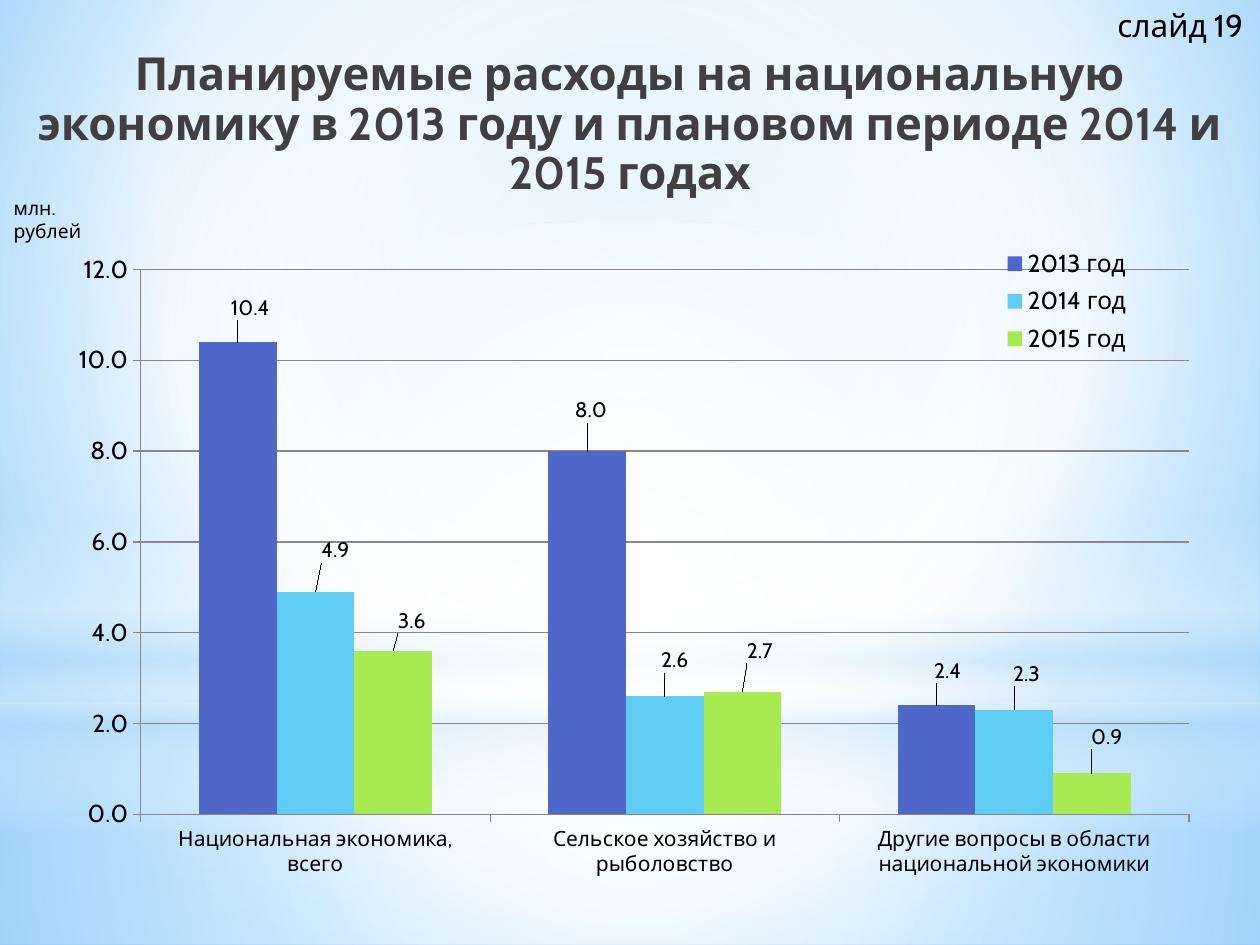
from lxml import etree
from pptx import Presentation
from pptx import util as u
from pptx.chart.data import CategoryChartData
from pptx.dml.color import RGBColor
from pptx.enum import chart as ch, shapes, text
from pptx.oxml.ns import qn

FONT = "Cabin"
WIDTH, HEIGHT = 10, 7.5

# Content
TITLE = ("Планируемые расходы на национальную экономику в 2013 году "
         "и плановом периоде 2014 и 2015 годах")
UNIT = "млн. рублей"
PAGE_LABEL = "слайд 19"
CATEGORIES = ["Национальная экономика, всего", "Сельское хозяйство и рыболовство",
              "Другие вопросы в области национальной экономики"]
# name, colour, values, label shifts in percent of the chart
SERIES = [
    ("2013 год", "4E67C8", (10.4, 8.0, 2.4), ((1, -2.4), (0.3, -3.3), (0.9, -2.4))),
    ("2014 год", "5ECCF3", (4.9, 2.6, 2.3), ((1.6, -3.4), (0.8, -2.6), (1, -2.6))),
    ("2015 год", "A7EA52", (3.6, 2.7, 0.9), ((1.5, -1.8), (1.4, -3.3), (1.2, -2.7))),
]

# Gradients: stops are (position, colour, opacity) in percent
CENTRE = (50, 50, 50, 50)
BACKGROUND = [(0, "9ED5FF", 100), (60, "FFFFFF", 100), (100, "5BB9FF", 100)]
TITLE_FILL = [(0, "000000", 100), (40, "404040", 100), (100, "212745", 65)]
RECT, OVAL = shapes.MSO_SHAPE.RECTANGLE, shapes.MSO_SHAPE.OVAL
# shape, top, height, stops, centre rectangle (None for a vertical run)
GLOWS = [
    (RECT, 5.58, 1.92, [(0, "FFFFFF", 91), (37, "FFFFFF", 76), (100, "B4DCFA", 79)], CENTRE),
    (RECT, 0, 5.58, [(0, "FFFFFF", 89), (48, "FFFFFF", 62), (100, "B4DCFA", 79)], CENTRE),
    (RECT, 4.12, 2.5, [(0, "FFFFFF", 0), (29, "FFFFFF", 30), (45, "B4DCFA", 40),
                       (55, "FFFFFF", 26), (65, "B4DCFA", 60), (100, "FFFFFF", 0)], None),
    (OVAL, 1.75, 5.58, [(0, "FFFFFF", 100), (56, "FFFFFF", 0)], CENTRE),
]


def child(parent, tag, **attributes):
    node = etree.SubElement(parent, qn(tag))
    for name, value in attributes.items():
        node.set(name, str(value))
    return node


def colour(value):
    return RGBColor.from_string(value)


def paint_gradient(fill, owner, stops, centre=None):
    fill.gradient()
    grad = owner.find(".//" + qn("a:gradFill"))
    for old in list(grad):
        grad.remove(old)
    stop_list = child(grad, "a:gsLst")
    for position, value, opacity in stops:
        stop = child(stop_list, "a:gs", pos=position * 1000)
        shade = child(stop, "a:srgbClr", val=value)
        if opacity < 100:
            child(shade, "a:alpha", val=opacity * 1000)
    if centre:
        sides = {side: share * 1000 for side, share in zip("ltrb", centre)}
        child(child(grad, "a:path", path="circle"), "a:fillToRect", **sides)
    else:
        child(grad, "a:lin", ang=90 * 60000, scaled=0)


def format_font(font, size, value="000000", bold=False):
    font.name, font.size, font.bold = FONT, u.Pt(size), bold
    font.color.rgb = colour(value)


def write(frame, words, size, align=text.PP_ALIGN.LEFT, wrap=False, bold=False):
    frame.word_wrap = wrap
    frame.vertical_anchor = text.MSO_ANCHOR.TOP
    para = frame.paragraphs[0]
    para.alignment = align
    span = para.add_run()
    span.text = words
    format_font(span.font, size, bold=bold)
    return span


def place_layout(parent, after, **parts):
    for old in parent.findall(qn("c:layout")):
        parent.remove(old)
    layout = etree.Element(qn("c:layout"))
    manual = child(layout, "c:manualLayout")
    for name, value in parts.items():
        child(manual, "c:" + name, val=value)
    parent.insert(0 if after is None else parent.index(after) + 1, layout)


def style_axis(axis, size):
    format_font(axis.tick_labels.font, size)
    axis.major_tick_mark = ch.XL_TICK_MARK.OUTSIDE
    axis.minor_tick_mark = ch.XL_TICK_MARK.NONE
    axis.format.line.color.rgb = colour("878787")
    axis.format.line.width = u.Pt(0.75)


def style_series(series, value, shifts):
    series.format.fill.solid()
    series.format.fill.fore_color.rgb = colour(value)
    series.invert_if_negative = False
    labels = series.data_labels
    labels.show_value = True
    labels.number_format, labels.number_format_is_linked = "0.0", False
    format_font(labels.font, 12)
    for index, (right, down) in enumerate(shifts):
        label = series.points[index].data_label
        format_font(label.font, 12)
        label.position = ch.XL_LABEL_POSITION.OUTSIDE_END
        node = series._element.xpath(f"c:dLbls/c:dLbl[c:idx/@val='{index}']")[0]
        place_layout(node, node.find(qn("c:idx")), x=right / 100, y=down / 100)


def add_spending_chart(page):
    data = CategoryChartData(number_format="0.0")
    data.categories = CATEGORIES
    for name, _, values, _ in SERIES:
        data.add_series(name, values)
    chart = page.shapes.add_chart(ch.XL_CHART_TYPE.COLUMN_CLUSTERED, u.Inches(0.07),
                                  u.Inches(1.47), u.Inches(9.88), u.Inches(5.58), data).chart
    chart.has_title = False
    format_font(chart.font, 18)
    plot = chart.plots[0]
    plot.gap_width, plot.overlap, plot.vary_by_categories = 150, 0, False
    for series, (_, value, _, shifts) in zip(plot.series, SERIES):
        style_series(series, value, shifts)

    # Axes
    style_axis(chart.category_axis, 12)
    axis = chart.value_axis
    style_axis(axis, 14)
    axis.minimum_scale, axis.maximum_scale, axis.major_unit = 0, 12, 2
    axis.tick_labels.number_format = "0.0"
    axis.tick_labels.number_format_is_linked = False
    axis.has_major_gridlines = True
    axis.major_gridlines.format.line.color.rgb = colour("878787")

    # Plot area and legend
    area = chart._chartSpace.find(".//" + qn("c:plotArea"))
    place_layout(area, None, layoutTarget="inner", xMode="edge", yMode="edge",
                 x=0.106, y=0.12, w=0.842, h=0.775)
    chart.has_legend = True
    legend = chart.legend
    legend.position = ch.XL_LEGEND_POSITION.RIGHT
    legend.include_in_layout = True
    format_font(legend.font, 14)
    node = legend._element
    place_layout(node, node.find(qn("c:legendPos")), xMode="edge", yMode="edge",
                 x=0.78, y=0.08, w=0.14, h=0.17)


def add_label(page, words, size, left, top, width, height):
    box = page.shapes.add_textbox(*map(u.Inches, (left, top, width, height)))
    write(box.text_frame, words, size)


def main():
    deck = Presentation()
    deck.slide_width, deck.slide_height = u.Inches(WIDTH), u.Inches(HEIGHT)
    page = deck.slides.add_slide(deck.slide_layouts[5])

    # Background and soft glows
    paint_gradient(page.background.fill, page._element, BACKGROUND, (20, 10, 20, 60))
    for kind, top, height, stops, centre in GLOWS:
        glow = page.shapes.add_shape(kind, 0, u.Inches(top), u.Inches(WIDTH), u.Inches(height))
        glow.shadow.inherit = False
        glow.line.fill.background()
        paint_gradient(glow.fill, glow._element, stops, centre)

    # Title, brought in front of the glows
    title = page.shapes.title
    title.left, title.top, title.width, title.height = map(u.Inches, (0.01, 0.36, 9.98, 1.25))
    span = write(title.text_frame, TITLE, 26, text.PP_ALIGN.CENTER, wrap=True, bold=True)
    title.text_frame.paragraphs[0].line_spacing = 0.9
    paint_gradient(span.font.fill, span._r, TITLE_FILL)
    page.shapes._spTree.append(title._element)

    add_label(page, UNIT, 11, 0.01, 1.51, 1.1, 0.31)
    add_spending_chart(page)
    add_label(page, PAGE_LABEL, 18, 8.77, 0, 1.23, 0.4)
    deck.save("out.pptx")


if __name__ == "__main__":
    main()
